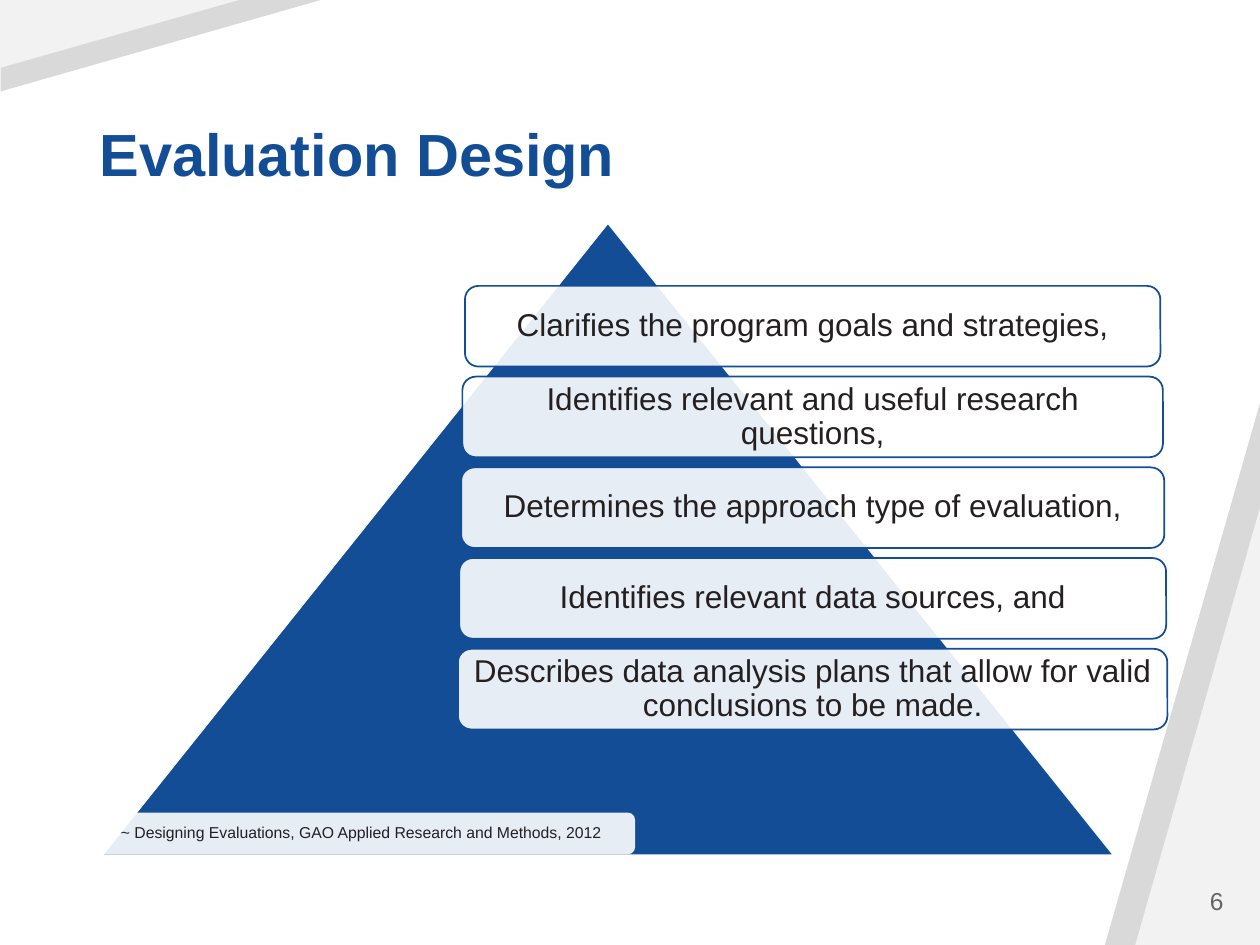
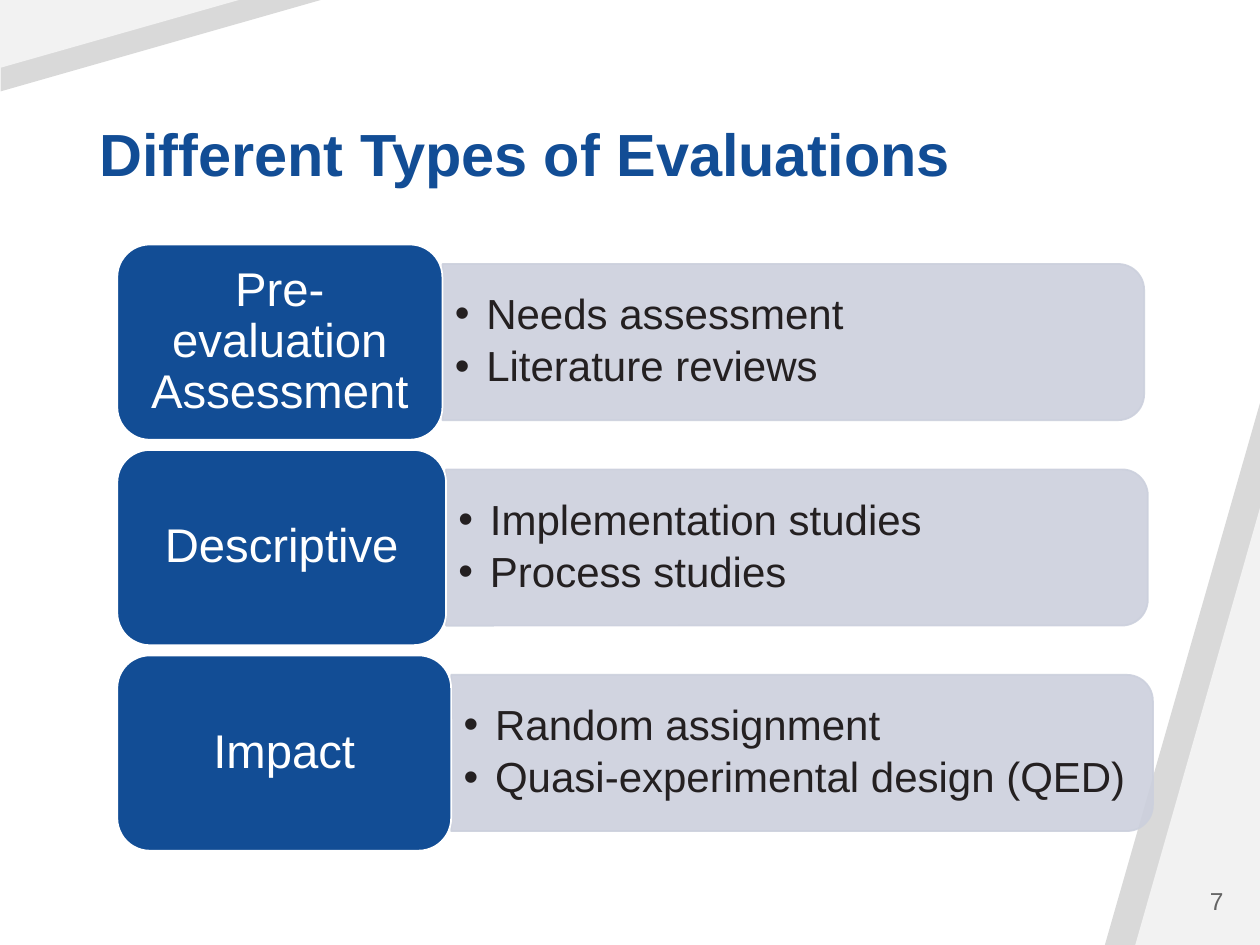
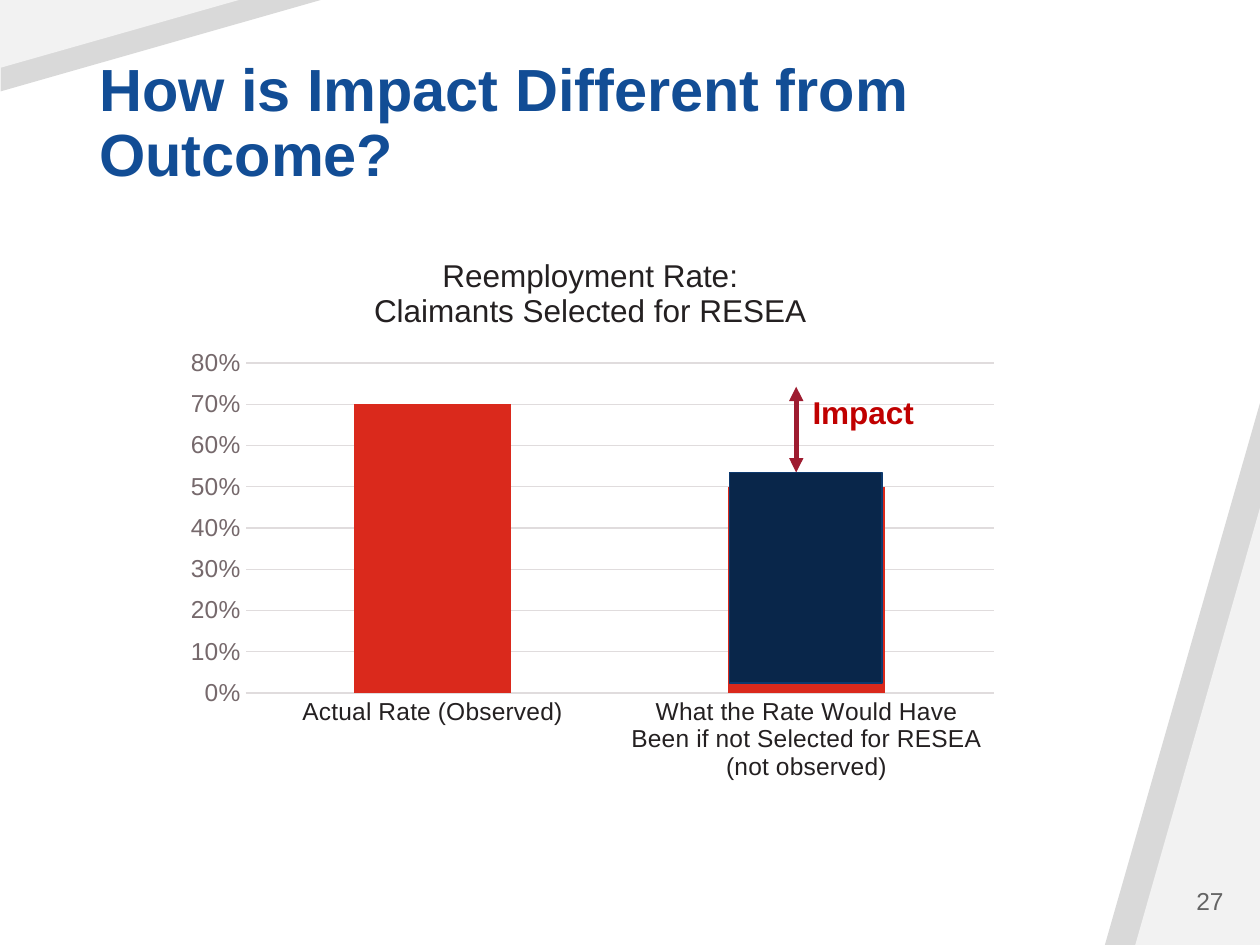
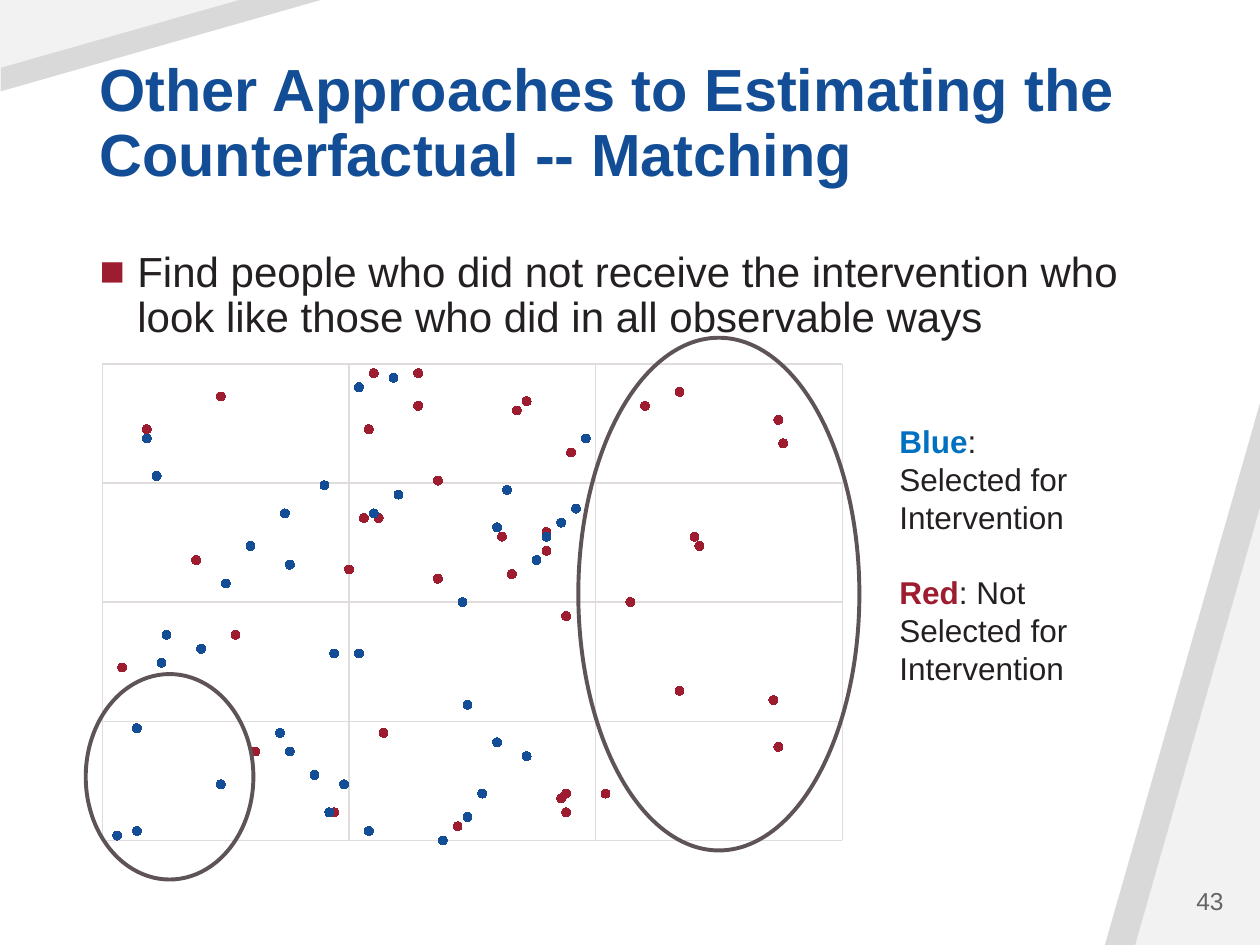
from lxml import etree
from pptx import Presentation
from pptx import util as u
from pptx.chart import data
from pptx.dml import color
from pptx.enum import chart as kinds
from pptx.enum import shapes, text
from pptx.oxml.ns import qn

FONT = "Arial"
BLUE, INK, WHITE = "124D95", "242021", "FFFFFF"
CRIMSON, GRID, MIST = "9E1C30", "E0DCDD", "CCD0DD"
DARK_BAND, LIGHT_BAND = "D9D9D9", "F2F2F2"
SHAPE = shapes.MSO_SHAPE
ALIGN = text.PP_ALIGN
ANCHOR = text.MSO_ANCHOR
TITLE_ONLY, TITLE_AND_BODY = 5, 1


def paint(target, hue):
    target.rgb = color.RGBColor.from_string(hue)


def fade(part):
    for hue in part.iter(qn("a:srgbClr")):
        etree.SubElement(hue, qn("a:alpha"), val="90000")


class Deck:
    def __init__(self):
        self.file = Presentation()
        self.file.slide_width, self.file.slide_height = u.Pt(720), u.Pt(540)
        self.slide = None

    def page(self, layout, title, number):
        self.slide = self.file.slides.add_slide(self.file.slide_layouts[layout])
        box = self.slide.shapes.title
        self.place(box, 49.7, 28.8, 626.4, 82.8)
        self.set_text(box, [title], 34, BLUE, bold=True, spacing=0.9, anchor=ANCHOR.BOTTOM)
        self.label(605.5, 500.4, 100.8, 28.8, [number], 14, "646464",
                   align=ALIGN.RIGHT, anchor=ANCHOR.MIDDLE)

    def backdrop(self):
        bands = [
            (631.4, 230.4, 88.6, 309.6, DARK_BAND, False),
            (648.7, 290.2, 71.3, 249.8, LIGHT_BAND, False),
            (66.2, -66.2, 52.6, 184.3, DARK_BAND, True),
            (49, -49, 38.9, 136.8, LIGHT_BAND, True),
        ]
        tree = self.file.slide_master.shapes.element
        for order, (left, top, width, height, hue, corner) in enumerate(bands):
            band = self.shape(SHAPE.ISOSCELES_TRIANGLE, left, top, width, height, hue)
            band.adjustments[0] = 1
            if corner:
                band.rotation = 270
                band.element.spPr.xfrm.set("flipV", "1")
            next(band.element.iter(qn("p:cNvPr"))).set("id", str(100 + order))
            tree.insert(2 + order, band.element)

    def place(self, box, left, top, width, height):
        box.left, box.top = u.Pt(left), u.Pt(top)
        box.width, box.height = u.Pt(width), u.Pt(height)

    def set_text(self, box, lines, size, hue, bold=False, align=ALIGN.LEFT, anchor=ANCHOR.TOP,
                 spacing=None, after=0, inset=(7.2, 3.6), bullet=None):
        frame = box.text_frame
        frame.word_wrap = True
        frame.auto_size = text.MSO_AUTO_SIZE.NONE
        frame.vertical_anchor = anchor
        frame.margin_left = frame.margin_right = u.Pt(inset[0])
        frame.margin_top = frame.margin_bottom = u.Pt(inset[1])
        frame.text = "\n".join(lines)
        for para in frame.paragraphs:
            if bullet:
                self.bullet(para, *bullet)
            para.alignment = align
            para.space_before, para.space_after = u.Pt(0), u.Pt(after)
            if spacing:
                para.line_spacing = spacing
            self.style(para.font, size, hue, bold)
        return frame

    def style(self, font, size, hue, bold=False):
        font.name, font.size, font.bold = FONT, u.Pt(size), bold
        paint(font.color, hue)

    def bullet(self, para, mark, hue, indent):
        props = para._p.get_or_add_pPr()
        props.set("marL", str(u.Pt(indent)))
        props.set("indent", str(-u.Pt(indent)))
        tint = etree.SubElement(props, qn("a:buClr"))
        etree.SubElement(tint, qn("a:srgbClr"), val=hue)
        etree.SubElement(props, qn("a:buFont"), typeface=FONT)
        etree.SubElement(props, qn("a:buChar"), char=mark)

    def label(self, left, top, width, height, lines, size, hue, **options):
        box = self.slide.shapes.add_textbox(u.Pt(left), u.Pt(top), u.Pt(width), u.Pt(height))
        return self.set_text(box, lines, size, hue, **options)

    def shape(self, kind, left, top, width, height, fill=None, line=None, weight=1, veiled=False):
        shape = self.slide.shapes.add_shape(kind, u.Pt(left), u.Pt(top), u.Pt(width), u.Pt(height))
        shape.shadow.inherit = False
        if fill:
            shape.fill.solid()
            paint(shape.fill.fore_color, fill)
        else:
            shape.fill.background()
        if veiled:
            fade(shape.element.spPr.find(qn("a:solidFill")))
        if line:
            paint(shape.line.color, line)
            shape.line.width = u.Pt(weight)
        else:
            shape.line.fill.background()
        return shape

    def double_arrow(self, x, top, bottom, hue, weight):
        arrow = self.slide.shapes.add_connector(
            shapes.MSO_CONNECTOR.STRAIGHT, u.Pt(x), u.Pt(top), u.Pt(x), u.Pt(bottom))
        paint(arrow.line.color, hue)
        arrow.line.width = u.Pt(weight)
        props = arrow.element.spPr
        for end in ("a:headEnd", "a:tailEnd"):
            etree.SubElement(props.find(qn("a:ln")), qn(end), type="triangle")
        etree.SubElement(props, qn("a:effectLst"))

    def chart(self, kind, left, top, width, height, values, plot_box):
        chart = self.slide.shapes.add_chart(
            kind, u.Pt(left), u.Pt(top), u.Pt(width), u.Pt(height), values).chart
        self.style(chart.font, 10, INK)
        chart.has_legend = False
        chart.has_title = False
        chart.plots[0].vary_by_categories = False
        area = chart.element.find(".//" + qn("c:plotArea"))
        for unset in area.findall(qn("c:layout")):
            area.remove(unset)
        layout = etree.Element(qn("c:layout"))
        area.insert(0, layout)
        manual = etree.SubElement(layout, qn("c:manualLayout"))
        settings = [("layoutTarget", "inner"), ("xMode", "edge"), ("yMode", "edge")]
        settings += zip("xywh", map(str, plot_box))
        for name, value in settings:
            etree.SubElement(manual, qn("c:" + name), val=value)
        return chart

    def scale(self, axis, top, step):
        axis.minimum_scale, axis.maximum_scale, axis.major_unit = 0, top, step
        axis.has_major_gridlines = True
        self.hairline(axis.major_gridlines)

    def hairline(self, part):
        paint(part.format.line.color, GRID)
        part.format.line.width = u.Pt(0.75)


def design_page(deck):
    deck.page(TITLE_ONLY, "Evaluation Design", "6")
    deck.backdrop()
    deck.shape(SHAPE.ISOSCELES_TRIANGLE, 58.3, 127.4, 578.2, 361.4, BLUE, WHITE)
    purposes = [
        ("Clarifies the program goals and strategies,", 397.4),
        ("Identifies relevant and useful research questions,", 400.3),
        ("Determines the approach type of evaluation,", 401.8),
        ("Identifies relevant data sources, and", 403.9),
        ("Describes data analysis plans that allow for valid conclusions to be made.", 405.4),
    ]
    centred = dict(align=ALIGN.CENTER, anchor=ANCHOR.MIDDLE, spacing=0.9)
    for row, (purpose, width) in enumerate(purposes):
        box = deck.shape(SHAPE.ROUNDED_RECTANGLE, 464.4 - width / 2, 163.4 + 51.84 * row,
                         width, 46.1, WHITE, BLUE, veiled=True)
        deck.set_text(box, [purpose], 18, INK, inset=(5, 5), **centred)
    citation = deck.shape(SHAPE.ROUNDED_RECTANGLE, 49.7, 464.4, 313.2, 23.8, WHITE, veiled=True)
    deck.set_text(citation, ["~ Designing Evaluations, GAO Applied Research and Methods, 2012"],
                  9, INK, inset=(3, 3), **centred)


def types_page(deck):
    deck.page(TITLE_ONLY, "Different Types of Evaluations", "7")
    groups = [
        ("Pre-evaluation Assessment", 185.8, ["Needs assessment", "Literature reviews"]),
        ("Descriptive", 187.9, ["Implementation studies", "Process studies"]),
        ("Impact", 190.8, ["Random assignment", "Quasi-experimental design (QED)"]),
    ]
    left, height, length, depth = 67, 111.6, 401, 89.3
    for row, (name, width, examples) in enumerate(groups):
        top = 139.7 + 117.4 * row
        middle = top + height / 2
        edge = left + width
        bar = deck.shape(SHAPE.ROUND_2_SAME_RECTANGLE, edge + (length - depth) / 2,
                         middle - length / 2, depth, length, MIST, MIST, veiled=True)
        bar.rotation = 90
        fade(bar.element.spPr.find(qn("a:ln")))
        deck.label(edge, middle - 40.3, 396.7, 80.6, examples, 24, INK, anchor=ANCHOR.MIDDLE,
                   spacing=0.9, after=4, bullet=("•", INK, 18))
        box = deck.shape(SHAPE.ROUNDED_RECTANGLE, left, top, width, height, BLUE, WHITE)
        deck.set_text(box, [name], 27, WHITE, align=ALIGN.CENTER, anchor=ANCHOR.MIDDLE,
                      spacing=0.9, inset=(8, 4.3))


def impact_page(deck):
    deck.page(TITLE_ONLY, "How is Impact Different from Outcome?", "27")
    rates = data.CategoryChartData(number_format="0%")
    rates.categories = ["Actual Rate (Observed)",
                        "What the Rate Would Have Been if not Selected for RESEA (not observed)"]
    rates.add_series("Series 1", [0.7, 0.5])
    chart = deck.chart(kinds.XL_CHART_TYPE.COLUMN_CLUSTERED, 97.2, 133.9, 480.2, 319.7,
                       rates, (0.09, 0.23, 0.89, 0.59))
    chart.has_title = True
    heading = chart.chart_title.text_frame
    heading.text = "Reemployment Rate:\nClaimants Selected for RESEA"
    for para in heading.paragraphs:
        deck.style(para.font, 18, INK)
    plot = chart.plots[0]
    plot.gap_width, plot.overlap = 139, -27
    fill = plot.series[0].format.fill
    fill.solid()
    paint(fill.fore_color, "DA291C")
    deck.scale(chart.value_axis, 0.8, 0.1)
    deck.hairline(chart.category_axis)
    chart.value_axis.format.line.fill.background()
    chart.value_axis.tick_labels.number_format = "0%"
    chart.value_axis.tick_labels.number_format_is_linked = False
    for axis, hue in ((chart.category_axis, INK), (chart.value_axis, "76696C")):
        axis.major_tick_mark = axis.minor_tick_mark = kinds.XL_TICK_MARK.NONE
        deck.style(axis.tick_labels.font, 14, hue)
    deck.double_arrow(455, 221, 270, CRIMSON, 2.75)
    deck.label(457.2, 221, 85.7, 28.8, ["Impact"], 18, "C00000", bold=True)
    deck.shape(SHAPE.RECTANGLE, 416.9, 270, 87.1, 120.2, "09264A", "0D396E")


SELECTED = (
    [0.73, 0.43, 0.55, 0.77, 0.25, 0.96, 0.49, 0.52, 0.46, 0.59, 0.07, 0.03, 0.07, 0.52,
     0.54, 0.74, 0.45, 0.98, 0.6, 0.11, 0.86, 0.47, 0.12, 0.36, 0.13, 0.38, 0.3, 0.38,
     0.2, 0.74, 0.8, 0.9, 0.24, 0.69, 0.37, 0.88, 0.09, 0.8, 0.93, 0.82],
    [51, 14, 70, 10, 55, 71, 12, 97, 6, 99, 24, 1, 2, 40, 2, 29, 76, 86, 74, 78, 18, 40,
     38, 23, 44, 59, 63, 19, 41, 5, 67, 65, 12, 0, 70, 60, 86, 21, 68, 75],
)
NOT_SELECTED = (
    [0.09, 0.9, 0.5, 1.37, 0.68, 0.27, 0.04, 1.17, 0.64, 0.84, 0.86, 0.83, 0.53, 0.94,
     0.55, 0.95, 0.54, 0.56, 1.36, 1.17, 0.93, 1.38, 1.07, 0.24, 1.21, 0.64, 0.31, 0.47,
     0.19, 1.37, 1.2, 1.02, 0.57, 0.68, 0.81, 0.94, 1.1, 0.94, 0.9, 0.72],
    [88, 62, 58, 20, 77, 44, 37, 96, 100, 92, 94, 57, 69, 6, 100, 83, 88, 69, 30, 32, 9,
     85, 51, 95, 63, 93, 19, 6, 60, 90, 65, 10, 23, 56, 65, 10, 93, 48, 66, 3],
)


def matching_page(deck):
    deck.page(TITLE_AND_BODY, "Other Approaches to Estimating the Counterfactual -- Matching", "43")
    body = deck.slide.placeholders[1]
    deck.place(body, 49.7, 139.7, 626.4, 62.6)
    deck.set_text(body, ["Find people who did not receive the intervention who look like "
                         "those who did in all observable ways"],
                  24, INK, spacing=0.9, bullet=("■", CRIMSON, 21.6))

    key = deck.label(506.9, 237.6, 142.6, 159.8,
                     ["", "Selected for Intervention", ""], 18, INK)
    blue_key, _, red_key = key.paragraphs
    red_key.space_before = u.Pt(21.6)
    for para, name, hue, rest in ((blue_key, "Blue", "0070C0", ":"),
                                  (red_key, "Red", CRIMSON, ": Not Selected for Intervention")):
        span = para.add_run()
        span.text = name
        span.font.bold = True
        paint(span.font.color, hue)
        para.add_run().text = rest

    people = data.XyChartData()
    for name, (across, up) in (("Series 1", SELECTED), ("Series 2", NOT_SELECTED)):
        series = people.add_series(name)
        for x, y in zip(across, up):
            series.add_data_point(x, y)
    chart = deck.chart(kinds.XL_CHART_TYPE.XY_SCATTER, 49.7, 202.3, 440.6, 283.7,
                       people, (0.02, 0.02, 0.96, 0.96))
    for series, hue in zip(chart.plots[0].series, (BLUE, CRIMSON)):
        series.format.line.fill.background()
        marker = series.marker
        marker.style, marker.size = kinds.XL_MARKER_STYLE.CIRCLE, 5
        marker.format.fill.solid()
        paint(marker.format.fill.fore_color, hue)
        paint(marker.format.line.color, hue)
    deck.scale(chart.category_axis, 1.5, 0.5)
    deck.scale(chart.value_axis, 102, 25.5)
    chart.category_axis.visible = chart.value_axis.visible = False

    for ring in ((330.5, 193, 160.6, 293), (49, 385.2, 95.8, 117.4)):
        deck.shape(SHAPE.OVAL, *ring, line="5E5457", weight=2.25)


def main():
    deck = Deck()
    for build in (design_page, types_page, impact_page, matching_page):
        build(deck)
    deck.file.save("out.pptx")


if __name__ == "__main__":
    main()
